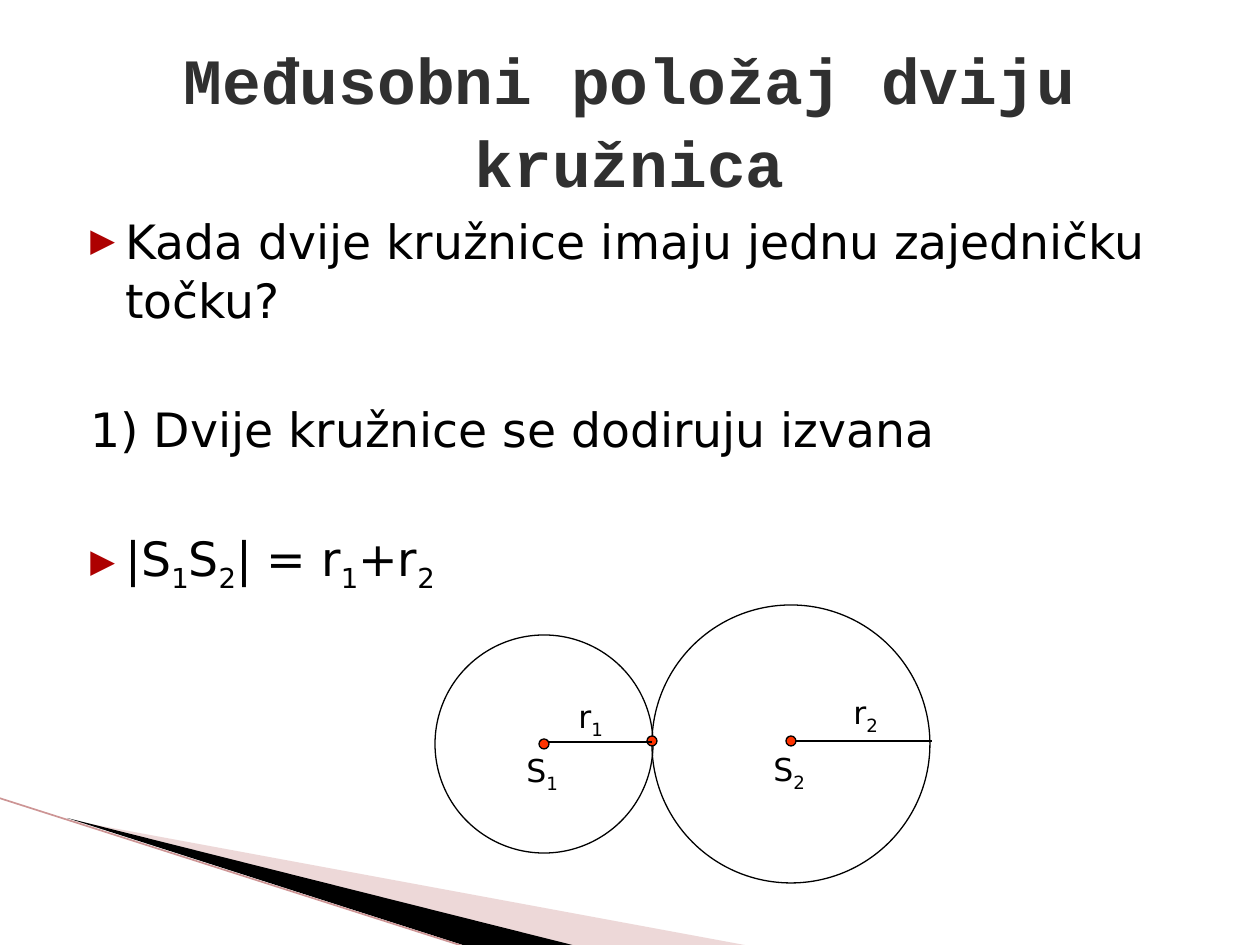
import pptx
import pptx.dml.color
import pptx.enum.shapes
import pptx.enum.text
import pptx.oxml
import pptx.oxml.ns
import pptx.util
import lxml.etree

EMU_PER_PX = 914400 / 126
BODY_FONT = "DejaVu Sans"
TITLE_FONT = "Courier New"
BLACK = "000000"
RED = "FF3300"


def px(length):
    """Turn px into EMU."""
    return pptx.util.Emu(round(length * EMU_PER_PX))


def colour(hex_value):
    """Turn a hex string into a colour."""
    return pptx.dml.color.RGBColor.from_string(hex_value)


def add_sub(parent, tag, **attributes):
    """Append a DrawingML element with the given attributes."""
    child = lxml.etree.SubElement(parent, pptx.oxml.ns.qn(tag))
    for key, value in attributes.items():
        child.set(key, str(value))
    return child


def add_runs(paragraph, parts, size, font=BODY_FONT, ink=BLACK, bold=False):
    """Add runs in which every second part is a subscript."""
    for index, part in enumerate(parts):
        run = paragraph.add_run()
        run.text = part
        run.font.size = pptx.util.Pt(size)
        run.font.name = font
        run.font.bold = bold
        run.font.color.rgb = colour(ink)
        if index % 2:
            run.font._element.set("baseline", "-25000")


def add_text_frame(slide, box):
    """Add a wrapping text box and return its frame."""
    frame = slide.shapes.add_textbox(*map(px, box)).text_frame
    frame.word_wrap = True
    return frame


def add_line(slide, start, end, ink, width):
    """Draw a straight line without a shadow."""
    line = slide.shapes.add_connector(
        pptx.enum.shapes.MSO_CONNECTOR.STRAIGHT, *map(px, start + end))
    line.line.color.rgb = colour(ink)
    line.line.width = pptx.util.Pt(width)
    add_sub(line._element.spPr, "a:effectLst")


def add_wedge(slide, points, ink, alpha=100):
    """Draw a filled wedge with the given opacity in percent."""
    start, *others = [tuple(map(px, point)) for point in points]
    builder = slide.shapes.build_freeform(*start, scale=1.0)
    builder.add_line_segments(others, close=True)
    wedge = builder.convert_to_shape()
    wedge.shadow.inherit = False
    wedge.line.fill.background()
    wedge.fill.solid()
    wedge.fill.fore_color.rgb = colour(ink)
    if alpha < 100:
        srgb = wedge._element.spPr.find(".//" + pptx.oxml.ns.qn("a:srgbClr"))
        add_sub(srgb, "a:alpha", val=alpha * 1000)


def add_circle(slide, centre, radius, fill=None):
    """Draw an outlined circle around a centre."""
    x, y = centre
    circle = slide.shapes.add_shape(
        pptx.enum.shapes.MSO_SHAPE.OVAL,
        *map(px, (x - radius, y - radius, 2 * radius, 2 * radius)))
    circle.shadow.inherit = False
    circle.line.color.rgb = colour(BLACK)
    circle.line.width = pptx.util.Pt(0.75)
    if fill:
        circle.fill.solid()
        circle.fill.fore_color.rgb = colour(fill)
    else:
        circle.fill.background()


def add_corner_wedges(slide, left, top):
    """Draw the decoration in the lower left corner."""
    def shifted(*points):
        return [(left + x, top + y) for x, y in points]

    add_wedge(slide, shifted((69, 22), (750, 148), (575, 148)), "D29E9E", 40)
    add_wedge(slide, shifted((67, 20), (576, 148), (469, 149)), BLACK)
    add_line(slide, *shifted((-1, 0), (469, 150)), "CD9595", 0.95)


def add_title(slide, box):
    """Write the centred title."""
    frame = add_text_frame(slide, box)
    frame.vertical_anchor = pptx.enum.text.MSO_ANCHOR.MIDDLE
    heading = frame.paragraphs[0]
    heading.alignment = pptx.enum.text.PP_ALIGN.CENTER
    heading.line_spacing = 1.07
    add_runs(heading, ["Međusobni položaj dviju kružnica"], 36.9,
             TITLE_FONT, "303030", True)


def add_body(slide, box):
    """Write the question, the case and its formula."""
    frame = add_text_frame(slide, box)
    statements = [
        (True, ["Kada dvije kružnice imaju jednu zajedničku točku?"]),
        (False, ["1) Dvije kružnice se dodiruju izvana"]),
        (True, ["|S", "1", "S", "2", "| = r", "1", "+r", "2"]),
    ]
    for index, (bulleted, parts) in enumerate(statements):
        statement = frame.add_paragraph() if index else frame.paragraphs[0]
        properties = statement._p.get_or_add_pPr()
        properties.set("marL", str(px(50 if bulleted else 15)))
        properties.set("indent", str(px(-35 if bulleted else 0)))
        if bulleted:
            add_sub(add_sub(properties, "a:buClr"), "a:srgbClr", val="AD0101")
            add_sub(properties, "a:buSzPct", val=68000)
            add_sub(properties, "a:buFont", typeface=BODY_FONT)
            add_sub(properties, "a:buChar", char="▶")
        else:
            add_sub(properties, "a:buNone")
        statement.line_spacing = 1.04
        if index:
            statement.space_before = pptx.util.Pt(40)
        add_runs(statement, parts, 27)


def add_tangent_circles(slide, left, top):
    """Draw two circles touching from outside, with centres and radii."""
    def at(x, y):
        return left + x, top + y

    add_circle(slide, at(109, 139), 109)
    add_circle(slide, at(356, 139), 139)
    for centre in ((109, 139), (356, 136), (217, 136)):
        add_circle(slide, at(*centre), 5, RED)
    add_line(slide, at(113, 137), at(217, 137), BLACK, 0.75)
    add_line(slide, at(361, 136), at(497, 136), BLACK, 0.75)
    labels = [("S", "1", 79, 140, 69), ("S", "2", 326, 139, 69),
              ("r", "1", 131, 86, 59), ("r", "2", 406, 82, 59)]
    for letter, number, x, y, width in labels:
        frame = add_text_frame(slide, at(x, y) + (width, 50))
        add_runs(frame.paragraphs[0], [letter, number], 18)


def main():
    """Build and save the slide."""
    deck = pptx.Presentation()
    deck.slide_width, deck.slide_height = px(1260), px(945)
    slide = deck.slides.add_slide(deck.slide_layouts[6])
    add_corner_wedges(slide, 0, 798)
    add_body(slide, (63, 204, 1134, 741))
    add_title(slide, (63, 38, 1134, 158))
    add_tangent_circles(slide, 435, 605)
    deck.save("out.pptx")


if __name__ == "__main__":
    main()
